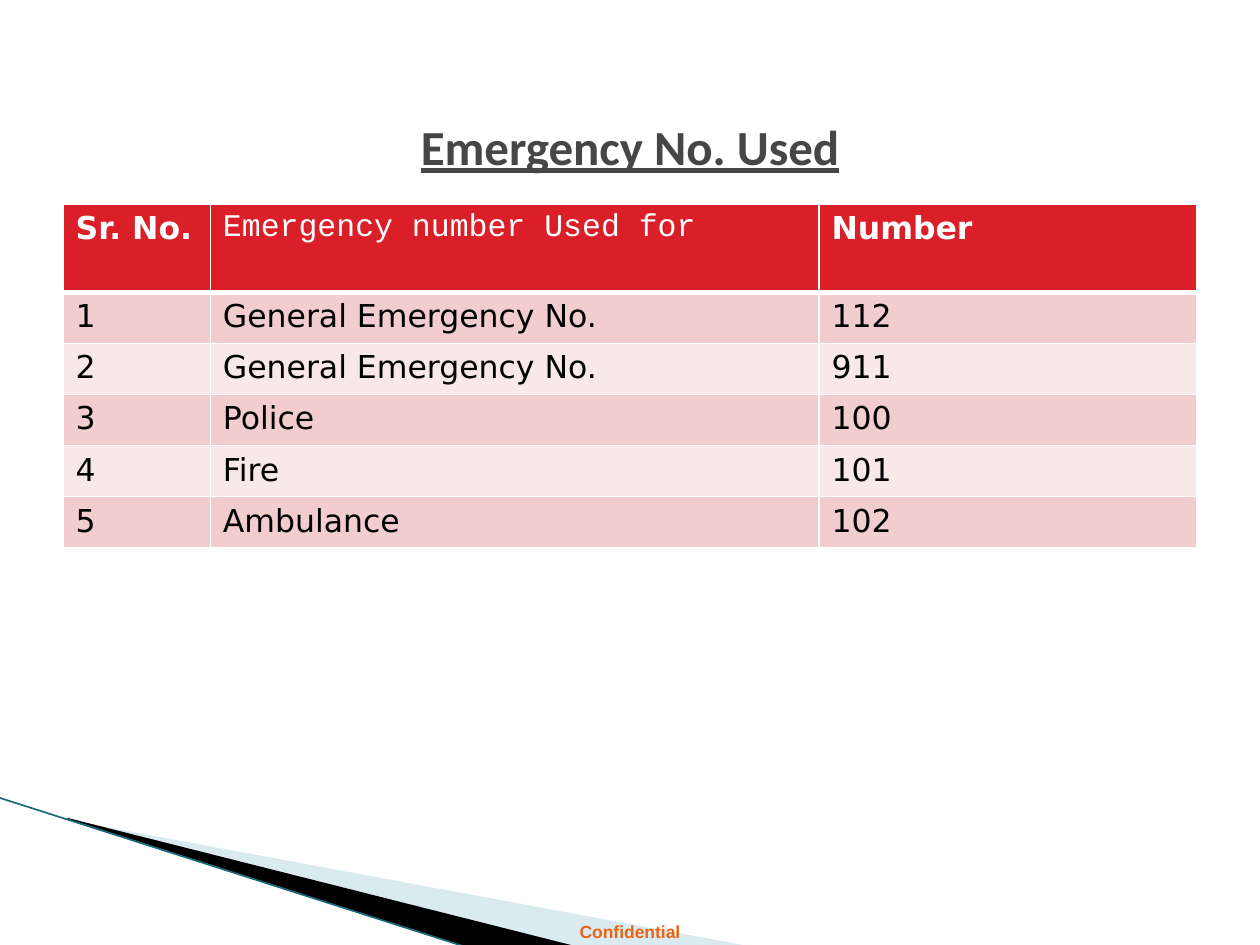
import pptx
import pptx.util
import pptx.dml.color
import pptx.enum.shapes
import pptx.enum.text
import pptx.oxml.ns
from lxml import etree

Inches, Pt = pptx.util.Inches, pptx.util.Pt
Anchor = pptx.enum.text.MSO_ANCHOR

COLORS = {
    "title": "464646", "footer": "EB6312", "header": "DA1F28",
    "odd": "F1CDCD", "even": "F8E8E8", "text": "000000",
    "white": "FFFFFF", "pale": "A0CBDC", "black": "000000", "edge": "17697F",
}
WIDTH, HEIGHT = 10, 7.5
MARGIN = WIDTH / 20

TITLE = "Emergency No. Used"
FOOTER = "Confidential"
HEADER = [("Sr. No.", "DejaVu Sans", True),
          ("Emergency number Used for", "Courier New", False),
          ("Number", "DejaVu Sans", True)]
CONTACTS = [("General Emergency No.", "112"), ("General Emergency No.", "911"),
            ("Police", "100"), ("Fire", "101"), ("Ambulance", "102")]
COLUMN_WIDTHS = [1.17, 4.83, 3]
TABLE_TOP, HEADER_HEIGHT, ROW_HEIGHT = 1.62, 0.7, 29.2 / 72

# (fill, opacity in percent, corner points)
WEDGES = [
    ("pale", 40, [(0.55, 6.51), (5.95, 7.51), (4.56, 7.51), (0.55, 6.5)]),
    ("black", 100, [(0.53, 6.49), (4.57, 7.51), (3.72, 7.52), (0.54, 6.5)]),
]
EDGE = [(-0.01, 6.33), (3.71, 7.52)]


def rgb(name):
    return pptx.dml.color.RGBColor.from_string(COLORS[name])


def child(parent, tag, **attributes):
    return etree.SubElement(parent, pptx.oxml.ns.qn(tag), attributes)


def add_span(para, text, font, size, color, bold=False, underline=None):
    span = para.add_run()
    span.text = text
    span.font.name, span.font.size = font, Pt(size)
    span.font.bold, span.font.underline = bold, underline
    span.font.color.rgb = rgb(color)


def add_wedge(page, color, opacity, points):
    corners = [(Inches(x), Inches(y)) for x, y in points]
    builder = page.shapes.build_freeform(*corners[0])
    builder.add_line_segments(corners[1:], close=True)
    wedge = builder.convert_to_shape()
    wedge.shadow.inherit = False
    wedge.line.fill.background()
    wedge.fill.solid()
    wedge.fill.fore_color.rgb = rgb(color)
    if opacity < 100:
        shade = wedge.fill._xPr.find(".//" + pptx.oxml.ns.qn("a:srgbClr"))
        child(shade, "a:alpha", val=str(opacity * 1000))


def add_edge(page):
    (x1, y1), (x2, y2) = EDGE
    edge = page.shapes.add_connector(
        pptx.enum.shapes.MSO_CONNECTOR.STRAIGHT,
        Inches(x1), Inches(y1), Inches(x2), Inches(y2))
    edge.line.width = Pt(0.95)
    edge.line.color.rgb = rgb("edge")
    child(edge._element.spPr, "a:effectLst")


def add_text(page, left, top, width, height, anchor, bottom, text, **style):
    """Add one centred line whose box has the given bottom inset."""
    box = page.shapes.add_textbox(*map(Inches, (left, top, width, height)))
    frame = box.text_frame
    frame.word_wrap = True
    frame.vertical_anchor = anchor
    frame.margin_bottom = Inches(bottom)
    para = frame.paragraphs[0]
    para.alignment = pptx.enum.text.PP_ALIGN.CENTER
    add_span(para, text, bold=True, **style)


def style_cell(cell, fill, bottom_width):
    properties = cell._tc.get_or_add_tcPr()
    for side, width in (("L", 1), ("R", 1), ("T", 1), ("B", bottom_width)):
        border = child(properties, "a:ln" + side, w=str(Pt(width)))
        child(child(border, "a:solidFill"), "a:srgbClr", val=COLORS["white"])
    cell.fill.solid()
    cell.fill.fore_color.rgb = rgb(fill)


def add_contacts(page):
    heights = [HEADER_HEIGHT] + [ROW_HEIGHT] * len(CONTACTS)
    table = page.shapes.add_table(
        len(heights), len(HEADER), Inches(MARGIN), Inches(TABLE_TOP),
        Inches(sum(COLUMN_WIDTHS)), Inches(sum(heights))).table
    for column, width in zip(table.columns, COLUMN_WIDTHS):
        column.width = Inches(width)
    for row, height in zip(table.rows, heights):
        row.height = Inches(height)
    for cell, (text, font, bold) in zip(table.rows[0].cells, HEADER):
        style_cell(cell, "header", 3)
        add_span(cell.text_frame.paragraphs[0], text, font, 18, "white", bold)
    for number, contact in enumerate(CONTACTS, 1):
        for cell, text in zip(table.rows[number].cells, (str(number), *contact)):
            style_cell(cell, "odd" if number % 2 else "even", 1)
            add_span(cell.text_frame.paragraphs[0], text, "DejaVu Sans", 18, "text")


def main():
    deck = pptx.Presentation()
    deck.slide_width, deck.slide_height = Inches(WIDTH), Inches(HEIGHT)
    page = deck.slides.add_slide(deck.slide_layouts[6])
    for wedge in WEDGES:
        add_wedge(page, *wedge)
    add_edge(page)
    add_text(page, 0, 7.26, WIDTH, 0.27, Anchor.TOP, 0.05, FOOTER,
             font="Arial", size=10, color="footer")
    add_contacts(page)
    add_text(page, MARGIN, 0.3, WIDTH - 2 * MARGIN, 1.25, Anchor.BOTTOM, 0.16, TITLE,
             font="Calibri", size=28, color="title", underline=True)
    deck.save("out.pptx")


if __name__ == "__main__":
    main()
